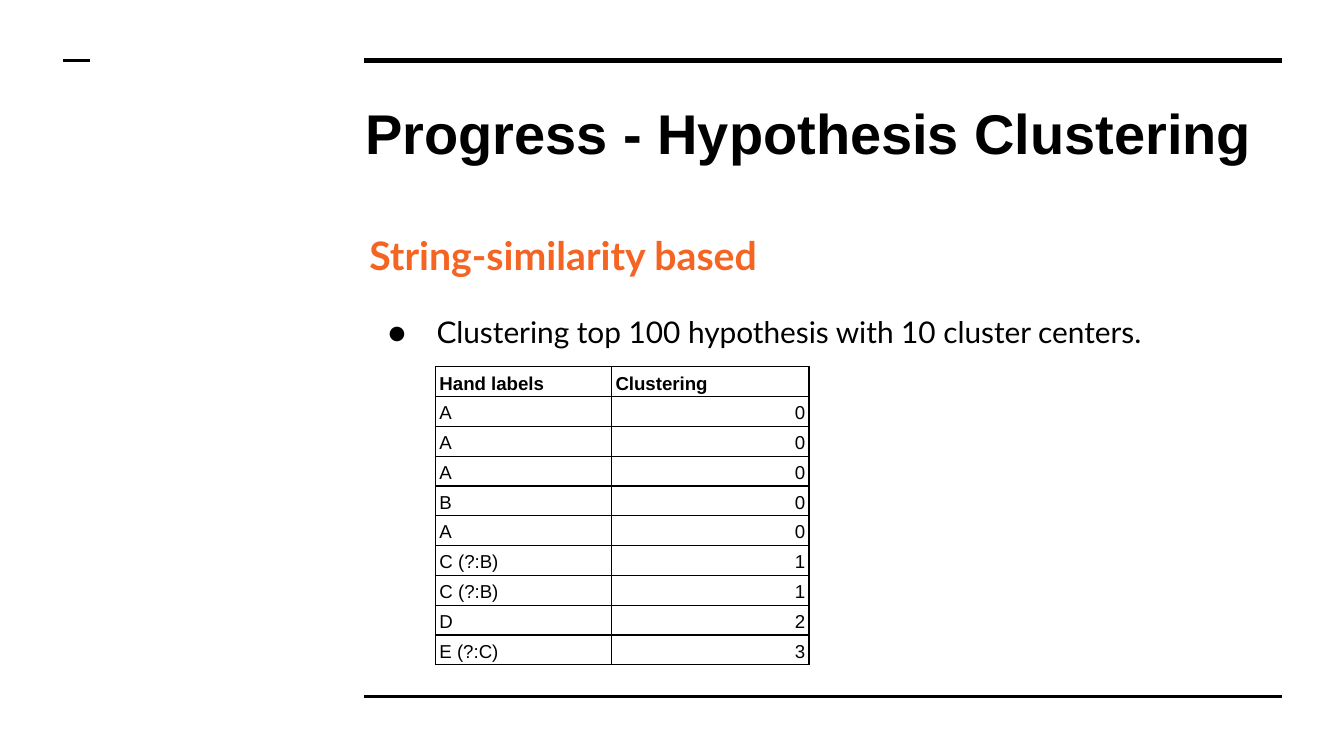
from lxml import etree
from pptx import Presentation, util as u
from pptx.dml.color import RGBColor
from pptx.enum import shapes, text
from pptx.oxml.ns import qn

WIDTH, HEIGHT = 10, 10 * 9 / 16
BLACK, ORANGE = "000000", "F46524"
TITLE = "Progress - Hypothesis Clustering"
SUBTITLE = "String-similarity based"
POINT = "Clustering top 100 hypothesis with 10 cluster centers."
HEADER = ("Hand labels", "Clustering")
LABELS = [
    ("A", 0), ("A", 0), ("A", 0), ("B", 0), ("A", 0),
    ("C (?:B)", 1), ("C (?:B)", 1), ("D", 2), ("E (?:C)", 3),
]
LEFT, RIGHT, TOP, BOTTOM = 2.71, 9.54, 0.45, 5.18
RULES = [(LEFT, RIGHT, TOP, 3), (LEFT, RIGHT, BOTTOM, 1.5), (0.47, 0.67, TOP, 1.5)]
TABLE_LEFT, TABLE_TOP, COLUMNS, ROW = 3.24, 2.73, (1.31, 1.47), 0.22


def color(value):
    return RGBColor.from_string(value)


def write(paragraph, words, size, font="Arial", ink=BLACK, bold=False,
          spacing=1.15, before=0, align=text.PP_ALIGN.LEFT):
    run = paragraph.add_run()
    run.text = words
    run.font.size, run.font.name, run.font.bold = u.Pt(size), font, bold
    run.font.color.rgb = color(ink)
    paragraph.line_spacing, paragraph.space_before = spacing, u.Pt(before)
    paragraph.alignment = align


def add_bullet(paragraph, mark, font, indent, hanging):
    props = paragraph._p.get_or_add_pPr()
    props.set("marL", str(u.Inches(indent)))
    props.set("indent", str(u.Inches(hanging)))
    ink = etree.SubElement(props, qn("a:buClr"))
    etree.SubElement(ink, qn("a:srgbClr"), val=BLACK)
    etree.SubElement(props, qn("a:buFont"), typeface=font)
    etree.SubElement(props, qn("a:buChar"), char=mark)


def add_frame(slide, *box):
    frame = slide.shapes.add_textbox(*map(u.Inches, box)).text_frame
    frame.word_wrap = True
    frame.margin_left = frame.margin_right = u.Inches(0.1)
    frame.margin_top = frame.margin_bottom = u.Inches(0.1)
    return frame


def add_rule(slide, start, end, y, width):
    rule = slide.shapes.add_connector(
        shapes.MSO_CONNECTOR.STRAIGHT, *map(u.Inches, (start, y, end, y)))
    rule.line.color.rgb, rule.line.width = color(BLACK), u.Pt(width)
    etree.SubElement(rule._element.spPr, qn("a:effectLst"))


def add_borders(cell):
    props = cell._tc.get_or_add_tcPr()
    for position, side in enumerate(("a:lnL", "a:lnR", "a:lnT", "a:lnB")):
        border = etree.Element(qn(side), w=str(u.Pt(0.75)))
        fill = etree.SubElement(border, qn("a:solidFill"))
        etree.SubElement(fill, qn("a:srgbClr"), val=BLACK)
        props.insert(position, border)


def add_label_table(slide):
    rows = [HEADER, *LABELS]
    table = slide.shapes.add_table(
        len(rows), len(COLUMNS), u.Inches(TABLE_LEFT), u.Inches(TABLE_TOP),
        u.Inches(sum(COLUMNS)), u.Inches(ROW * len(rows))).table
    table.first_row = table.horz_banding = False
    for column, width in zip(table.columns, COLUMNS):
        column.width = u.Inches(width)
    for r, values in enumerate(rows):
        table.rows[r].height = u.Inches(ROW)
        for c, value in enumerate(values):
            cell = table.cell(r, c)
            cell.fill.background()
            cell.vertical_anchor = text.MSO_ANCHOR.BOTTOM
            cell.margin_left = cell.margin_right = u.Inches(0.03)
            cell.margin_top, cell.margin_bottom = u.Inches(0.01), u.Inches(0.02)
            number = isinstance(value, int)
            write(cell.text_frame.paragraphs[0], str(value), 10, bold=r == 0,
                  align=text.PP_ALIGN.RIGHT if number else text.PP_ALIGN.LEFT)
            add_borders(cell)


def main():
    """Build the hypothesis clustering slide."""
    deck = Presentation()
    deck.slide_width, deck.slide_height = u.Inches(WIDTH), u.Inches(HEIGHT)
    slide = deck.slides.add_slide(deck.slide_layouts[6])
    for rule in RULES:
        add_rule(slide, *rule)
    title = add_frame(slide, 2.62, 0.63, 6.91, 0.69)
    write(title.paragraphs[0], TITLE, 30, bold=True, spacing=1.0)
    body = add_frame(slide, 2.65, 1.57, 6.87, 3.28)
    write(body.paragraphs[0], SUBTITLE, 21, font="Lato", ink=ORANGE, bold=True)
    point = body.add_paragraph()
    write(point, POINT, 16, font="Lato", before=16)
    add_bullet(point, "●", "Lato", 0.5, -0.36)
    add_label_table(slide)
    deck.save("out.pptx")


if __name__ == "__main__":
    main()
